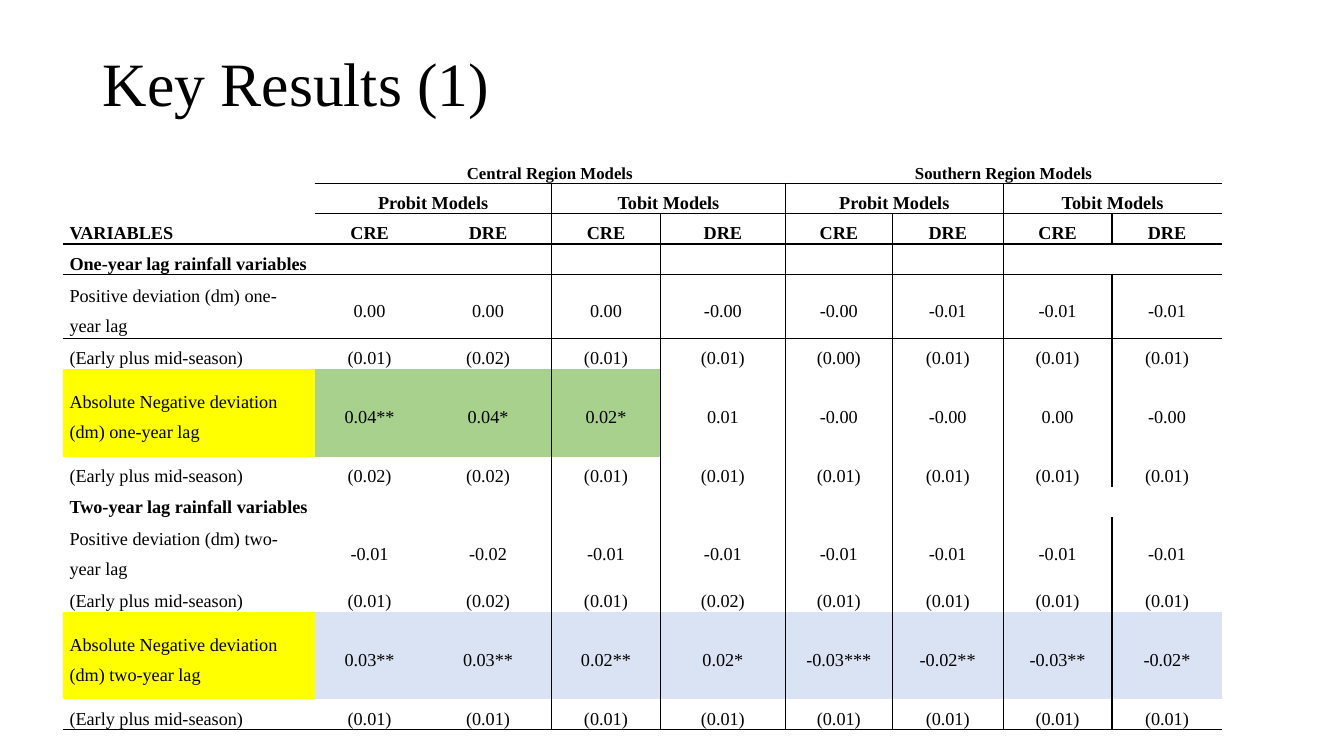
import pptx
import pptx.dml.color
import pptx.enum.text
import pptx.oxml.ns
import pptx.util
from lxml import etree

WIDTH, HEIGHT = 13.33, 7.5
FONT = "Times New Roman"
BLACK, YELLOW, GREEN, BLUE = "000000", "FFFF00", "A9D18E", "DAE3F3"
PLAIN_STYLE = "{2D5ABB26-0587-4C30-8999-92F81FD0307C}"

COLUMN_WIDTHS = [2.5, 1.09, 1.26, 1.08, 1.24, 1.06, 1.1, 1.08, 1.09]
GROUP_HEIGHTS = [0.3, 0.64, 0.3, 0.87, 0.3]
ROW_HEIGHTS = [0.28, 0.3, 0.3] + GROUP_HEIGHTS * 2

SEASON = "(Early plus mid-season)"
ROWS = [
    ["", "Central Region Models", "", "", "", "Southern Region Models", "", "", ""],
    [""] + ["Probit Models", "", "Tobit Models", ""] * 2,
    ["VARIABLES"] + ["CRE", "DRE"] * 4,
    ["One-year lag rainfall variables"] + [""] * 8,
    ["Positive deviation (dm) one-year lag",
     "0.00", "0.00", "0.00", "-0.00", "-0.00", "-0.01", "-0.01", "-0.01"],
    [SEASON, "(0.01)", "(0.02)", "(0.01)", "(0.01)", "(0.00)", "(0.01)", "(0.01)", "(0.01)"],
    ["Absolute Negative deviation (dm) one-year lag",
     "0.04**", "0.04*", "0.02*", "0.01", "-0.00", "-0.00", "0.00", "-0.00"],
    [SEASON, "(0.02)", "(0.02)"] + ["(0.01)"] * 6,
    ["Two-year lag rainfall variables"] + [""] * 8,
    ["Positive deviation (dm) two-year lag", "-0.01", "-0.02"] + ["-0.01"] * 6,
    [SEASON, "(0.01)", "(0.02)", "(0.01)", "(0.02)"] + ["(0.01)"] * 4,
    ["Absolute Negative deviation (dm) two-year lag",
     "0.03**", "0.03**", "0.02**", "0.02*", "-0.03***", "-0.02**", "-0.03**", "-0.02*"],
    [SEASON] + ["(0.01)"] * 8,
]
SECTION_ROWS = (3, 8)
BOLD_ROWS = (0, 1, 2) + SECTION_ROWS
# (row, first column, last column)
MERGES = [(0, 1, 4), (0, 5, 8)] + [(1, c, c + 1) for c in (1, 3, 5, 7)]
MERGES += [(row, 0, 1) for row in SECTION_ROWS]
# (row, last column): colour of the estimates
HIGHLIGHTS = {6: (3, GREEN), 11: (8, BLUE)}


def color(hex_string):
    return pptx.dml.color.RGBColor.from_string(hex_string)


def apply(target, values):
    for name, value in values.items():
        setattr(target, name, value)


def write(paragraph, text, size, bold, paragraph_format):
    apply(paragraph, paragraph_format)
    run = paragraph.add_run()
    run.text = text
    apply(run.font, {"name": FONT, "size": pptx.util.Pt(size), "bold": bold})
    run.font.color.rgb = color(BLACK)


def line_right(row, column):
    """Tell whether a rule stands right of this cell."""
    if row < 2:
        return row == 1 and column in (2, 4, 6)
    return 2 <= column <= (6 if row in SECTION_ROWS else 7)


def line_below(row, column):
    """Tell whether a rule lies under this cell."""
    return row in (2, 3, 12) or (row in (0, 1) and column > 0)


def add_borders(cell, row, column):
    sides = {
        "lnL": line_right(row, column - 1),
        "lnR": line_right(row, column),
        "lnT": row > 0 and line_below(row - 1, column),
        "lnB": line_below(row, column),
    }
    properties = cell._tc.get_or_add_tcPr()
    qn = pptx.oxml.ns.qn
    for side, visible in sides.items():
        if visible:
            line = etree.SubElement(properties, qn(f"a:{side}"), w=str(pptx.util.Pt(1)))
            fill = etree.SubElement(line, qn("a:solidFill"))
            etree.SubElement(fill, qn("a:srgbClr"), val=BLACK)


def fill_cell(cell, row, column):
    last, highlight = HIGHLIGHTS.get(row, (-1, None))
    if column <= last:
        cell.fill.solid()
        cell.fill.fore_color.rgb = color(highlight if column else YELLOW)
    else:
        cell.fill.background()


def format_cell(cell, row, column):
    side = pptx.util.Inches(0.07)
    apply(cell, {"margin_left": side, "margin_right": side, "margin_top": 0,
                 "margin_bottom": 0,
                 "vertical_anchor": pptx.enum.text.MSO_ANCHOR.MIDDLE})
    add_borders(cell, row, column)
    fill_cell(cell, row, column)
    paragraph = cell.text_frame.paragraphs[0]
    text = ROWS[row][column]
    if text:
        align = pptx.enum.text.PP_ALIGN
        write(paragraph, text, 13 if row else 12, row in BOLD_ROWS,
              {"alignment": align.CENTER if column else align.LEFT,
               "line_spacing": 1.5, "space_after": pptx.util.Pt(8)})
    else:
        etree.SubElement(paragraph._p, pptx.oxml.ns.qn("a:endParaRPr"), sz="1200")


def add_results_table(slide):
    lengths = (0.62, 1.54, sum(COLUMN_WIDTHS), sum(ROW_HEIGHTS))
    frame = slide.shapes.add_table(len(ROWS), len(COLUMN_WIDTHS),
                                   *map(pptx.util.Inches, lengths))
    table = frame.table
    apply(table, {"first_row": False, "horz_banding": False})
    table._tbl.tblPr.find(pptx.oxml.ns.qn("a:tableStyleId")).text = PLAIN_STYLE
    for column, width in zip(table.columns, COLUMN_WIDTHS):
        column.width = pptx.util.Inches(width)
    for row, height in zip(table.rows, ROW_HEIGHTS):
        row.height = pptx.util.Inches(height)
    for row, first, last in MERGES:
        table.cell(row, first).merge(table.cell(row, last))
    for row in range(len(ROWS)):
        for column in range(len(COLUMN_WIDTHS)):
            format_cell(table.cell(row, column), row, column)


def add_title(slide, text):
    box = slide.shapes.add_textbox(*map(pptx.util.Inches, (0.92, 0.4, 8.65, 0.91)))
    apply(box.text_frame, {"word_wrap": True,
                           "vertical_anchor": pptx.enum.text.MSO_ANCHOR.MIDDLE})
    write(box.text_frame.paragraphs[0], text, 44, False, {"line_spacing": 0.9})


def main():
    presentation = pptx.Presentation()
    apply(presentation, {"slide_width": pptx.util.Inches(WIDTH),
                         "slide_height": pptx.util.Inches(HEIGHT)})
    slide = presentation.slides.add_slide(presentation.slide_layouts[6])
    add_results_table(slide)
    add_title(slide, "Key Results (1)")
    presentation.save("out.pptx")


if __name__ == "__main__":
    main()
